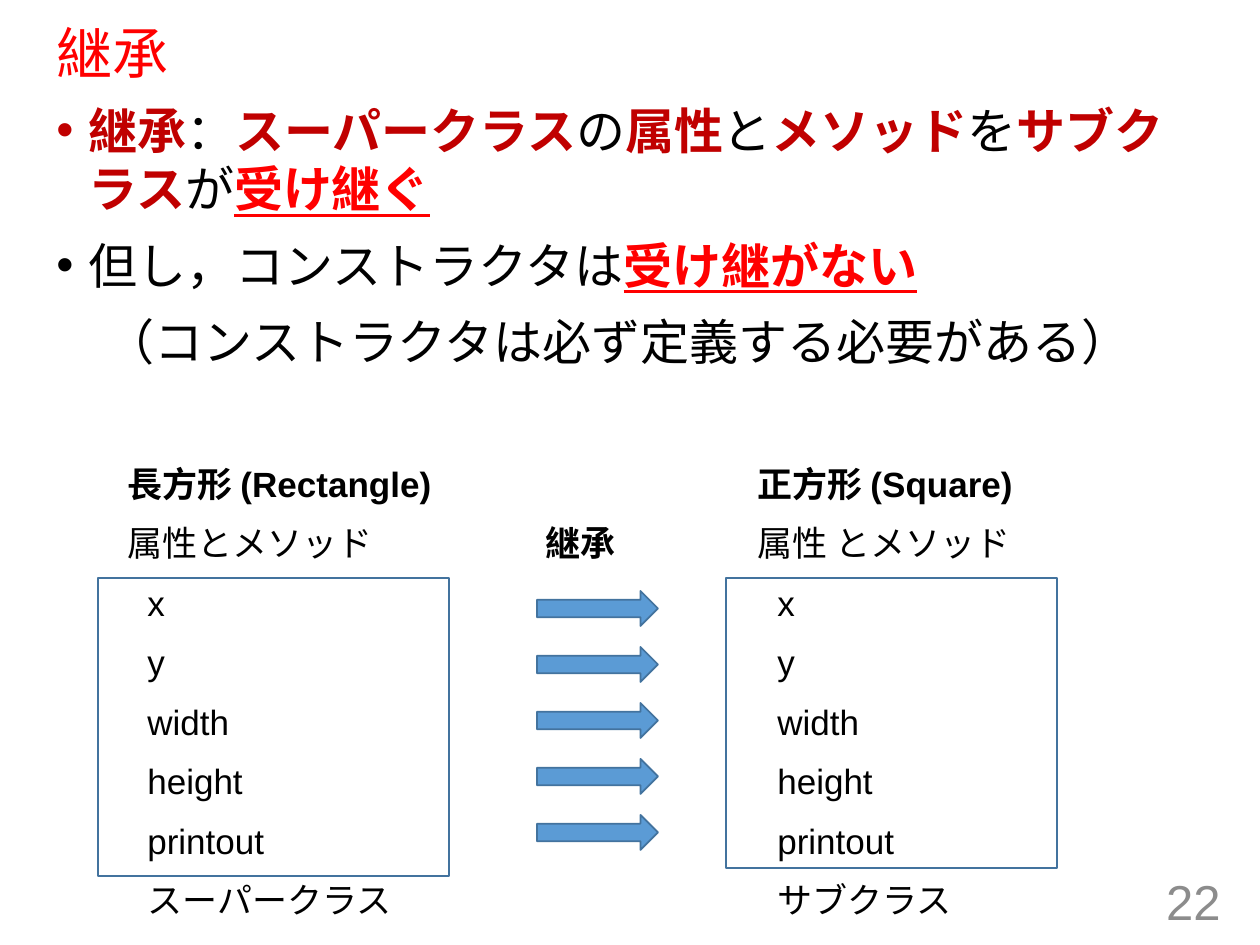
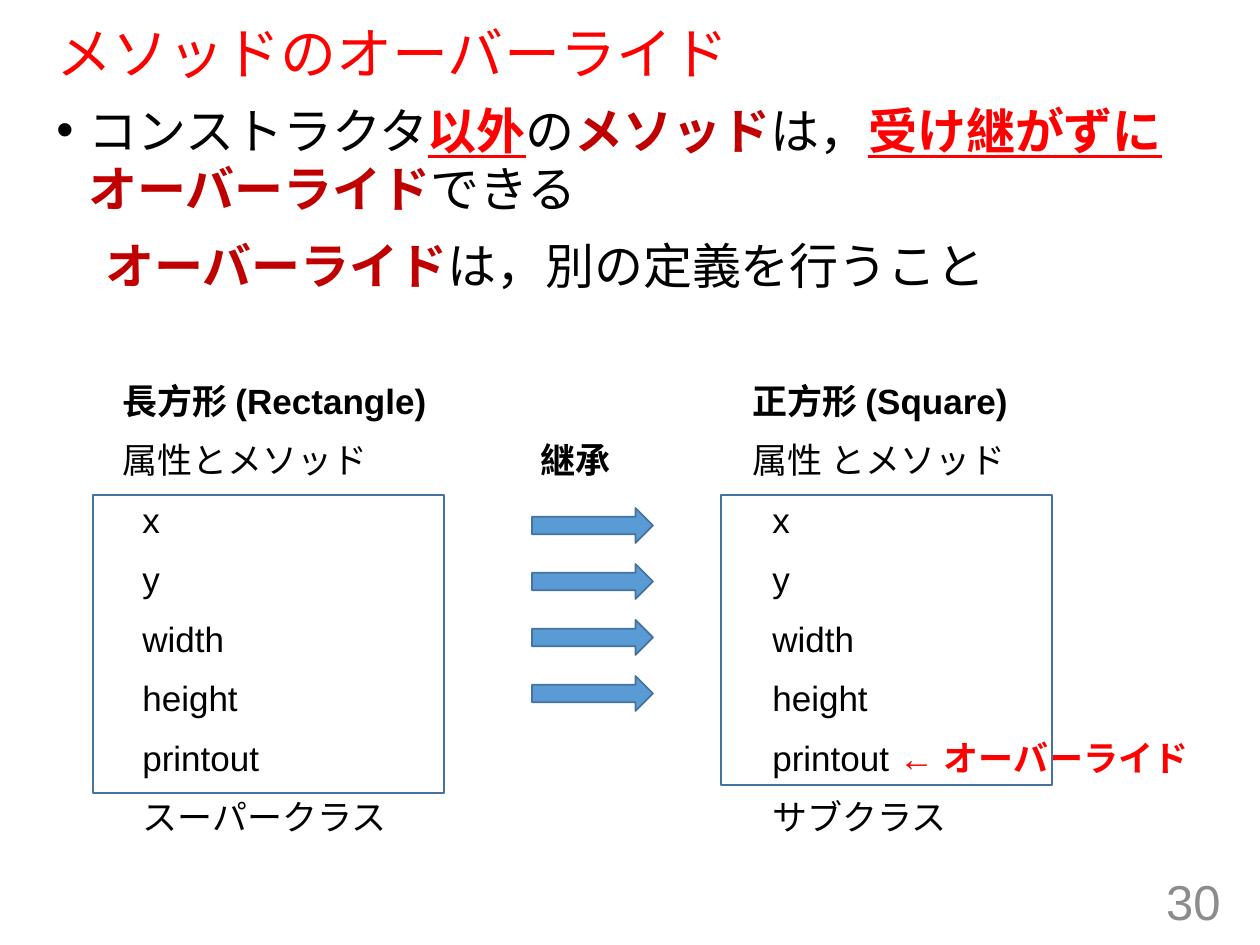
"""Build two slides on class inheritance and method overriding."""
from lxml.etree import SubElement
from pptx import Presentation
from pptx.dml.color import RGBColor
from pptx.enum.shapes import MSO_SHAPE
from pptx.enum.text import MSO_ANCHOR, PP_ALIGN
from pptx.oxml.ns import qn
from pptx.util import Pt

PX = 914400 / 126
FONT = "Arial"
RED = RGBColor(0xFF, 0x00, 0x00)
DARK_RED = RGBColor(0xC0, 0x00, 0x00)
BLACK = RGBColor(0x00, 0x00, 0x00)
GREY = RGBColor(0x8C, 0x8C, 0x8C)
BLUE = RGBColor(0x5B, 0x9B, 0xD5)
OUTLINE = RGBColor(0x43, 0x73, 0x9E)

PLAIN = {"rgb": BLACK}
STRONG = {"rgb": BLACK, "bold": True}
TERM = {"rgb": DARK_RED, "bold": True}
KEY = {"rgb": RED, "bold": True, "underline": True}
NOTE = {"rgb": RED, "bold": True}

MEMBERS = ["x", "y", "width", "height", "printout"]
HEADING_TABS = [630]
CAPTION_TABS = [418, 630]
MEMBER_TABS = [20, 650]


def emu(pixels):
    """Turn px into EMU."""
    return round(pixels * PX)


def add_box(page, left, top, width, height, anchor=MSO_ANCHOR.TOP):
    """Add a wrapping text box and return its text frame."""
    box = page.shapes.add_textbox(*map(emu, (left, top, width, height)))
    frame = box.text_frame
    frame.word_wrap = True
    frame.vertical_anchor = anchor
    return frame


def add_paragraph(frame, spans, size):
    """Write (text, style) spans into the next paragraph of the frame."""
    first = frame.paragraphs[0]
    para = frame.add_paragraph() if first.runs else first
    para.space_before = Pt(10 if first.runs else 0)
    for text, style in spans:
        span = para.add_run()
        span.text = text
        span.font.color.rgb = style["rgb"]
        values = {"name": FONT, "size": Pt(size), **style}
        del values["rgb"]
        for name, value in values.items():
            setattr(span.font, name, value)
    return para


def add_bullet(para):
    """Give the paragraph a hanging bullet."""
    properties = para._p.get_or_add_pPr()
    properties.set("marL", str(emu(32)))
    properties.set("indent", str(emu(-32)))
    SubElement(properties, qn("a:buFont"), typeface=FONT)
    SubElement(properties, qn("a:buChar"), char="•")


def add_tabs(para, stops):
    """Set left tab stops, in px, on the paragraph."""
    tabs = SubElement(para._p.get_or_add_pPr(), qn("a:tabLst"))
    for stop in stops:
        SubElement(tabs, qn("a:tab"), pos=str(emu(stop)), algn="l")


def add_figure(page, kind, left, top, width, height, fill=None):
    """Add an outlined preset shape, hollow unless a fill is given."""
    shape = page.shapes.add_shape(kind, *map(emu, (left, top, width, height)))
    shape.shadow.inherit = False
    shape.line.color.rgb = OUTLINE
    shape.line.width = Pt(1)
    if fill is None:
        shape.fill.background()
    else:
        shape.fill.solid()
        shape.fill.fore_color.rgb = fill


def add_page(deck, title, number):
    """Add a blank page with its title and page number."""
    page = deck.slides.add_slide(deck.slide_layouts[6])
    heading = add_box(page, 44, 24, 1166, 64, MSO_ANCHOR.MIDDLE)
    add_paragraph(heading, [(title, {"rgb": RED})], 32).line_spacing = 0.9
    footer = add_box(page, 949, 876, 284, 50, MSO_ANCHOR.MIDDLE)
    add_paragraph(footer, [(number, {"rgb": GREY})], 28).alignment = PP_ALIGN.RIGHT
    return page


def add_points(page, points, remark):
    """Add the bulleted points and an indented closing remark."""
    frame = add_box(page, 44, 94, 1146, 302)
    for spans in points:
        add_bullet(add_paragraph(frame, spans, 28))
    para = add_paragraph(frame, remark, 28)
    para._p.get_or_add_pPr().set("marL", str(emu(49)))


def add_class_diagram(page, left, top, arrow_count, note=()):
    """Compare superclass and subclass members, with inheritance arrows."""
    rows = [
        ([("長方形 (Rectangle)\t正方形 (Square)", STRONG)], HEADING_TABS),
        ([("属性とメソッド\t", PLAIN), ("継承", STRONG),
          ("\t属性 とメソッド", PLAIN)], CAPTION_TABS),
    ]
    rows += [([(f"\t{name}\t{name}", PLAIN)], MEMBER_TABS) for name in MEMBERS]
    rows[-1][0].extend(note)
    rows.append(([("\tスーパークラス\tサブクラス", PLAIN)], MEMBER_TABS))
    frame = add_box(page, left + 17, top - 122, 1121, 470)
    for spans, stops in rows:
        add_tabs(add_paragraph(frame, spans, 20), stops)
    add_figure(page, MSO_SHAPE.RECTANGLE, left + 628, top, 331, 290)
    add_figure(page, MSO_SHAPE.RECTANGLE, left, top, 351, 298)
    for index in range(arrow_count):
        add_figure(page, MSO_SHAPE.RIGHT_ARROW, left + 439,
                   top + 13 + 56 * index, 121, 35, BLUE)


def main():
    """Build and save the deck."""
    deck = Presentation()
    deck.slide_width, deck.slide_height = emu(1260), emu(945)

    page = add_page(deck, "継承", "22")
    add_points(page, [
        [("継承", TERM), ("：", PLAIN), ("スーパークラス", TERM), ("の", PLAIN),
         ("属性", TERM), ("と", PLAIN), ("メソッド", TERM), ("を", PLAIN),
         ("サブクラス", TERM), ("が", PLAIN), ("受け継ぐ", KEY)],
        [("但し，コンストラクタは", PLAIN), ("受け継がない", KEY)],
    ], [("（コンストラクタは必ず定義する必要がある）", PLAIN)])
    add_class_diagram(page, 98, 578, len(MEMBERS))

    page = add_page(deck, "メソッドのオーバーライド", "30")
    add_points(page, [
        [("コンストラクタ", PLAIN), ("以外", KEY), ("の", PLAIN),
         ("メソッド", TERM), ("は，", PLAIN), ("受け継がずに", KEY),
         ("オーバーライド", TERM), ("できる", PLAIN)],
    ], [("オーバーライド", TERM), ("は，別の定義を行うこと", PLAIN)])
    add_class_diagram(page, 93, 495, len(MEMBERS) - 1,
                      [(" ", PLAIN), ("← オーバーライド", NOTE)])

    deck.save("out.pptx")


if __name__ == "__main__":
    main()
